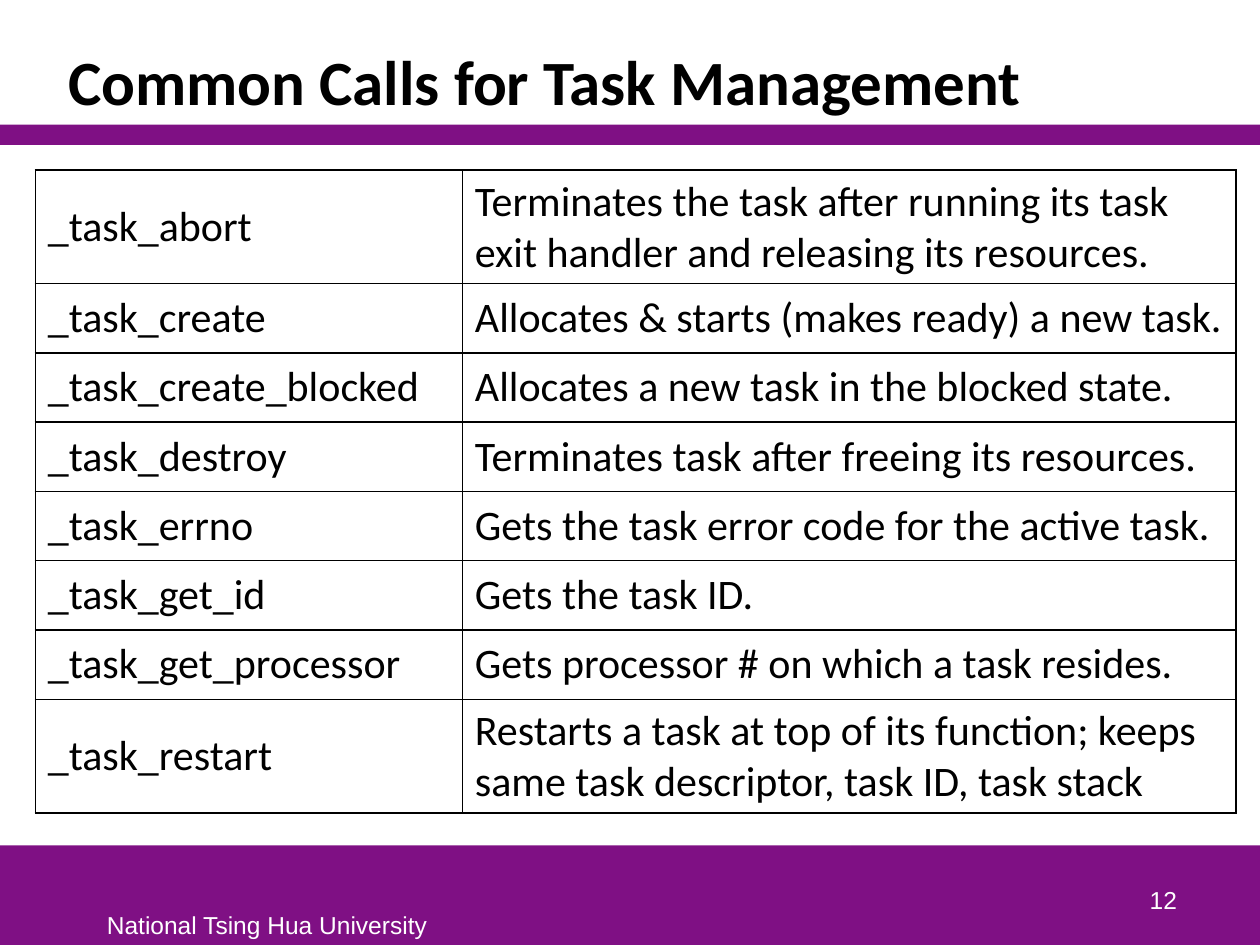
"""Build the slide that lists the common task management calls."""
import pptx
import pptx.dml.color
import pptx.enum.shapes
import pptx.enum.text
import pptx.oxml
import pptx.oxml.ns
import pptx.util

Inches = pptx.util.Inches
Align = pptx.enum.text.PP_ALIGN
Anchor = pptx.enum.text.MSO_ANCHOR
Fit = pptx.enum.text.MSO_AUTO_SIZE

CALLS = [
    ("_task_abort", "Terminates the task after running its task exit handler "
     "and releasing its resources.", False),
    ("_task_create", "Allocates & starts (makes ready) a new task.", True),
    ("_task_create_blocked", "Allocates a new task in the blocked state.", True),
    ("_task_destroy", "Terminates task after freeing its resources.", True),
    ("_task_errno", "Gets the task error code for the active task.", True),
    ("_task_get_id", "Gets the task ID.", True),
    ("_task_get_processor", "Gets processor # on which a task resides.", False),
    ("_task_restart", "Restarts a task at top of its function; keeps same "
     "task descriptor, task ID, task stack", False),
]


def color(code):
    """Turn a hex string into a colour."""
    return pptx.dml.color.RGBColor.from_string(code)


def write(frame, text, size=24, font="Calibri", ink="000000", bold=False,
          align=Align.LEFT, space=None, hang=0):
    """Put formatted text into the first paragraph of a frame."""
    para = frame.paragraphs[0]
    para.alignment = align
    para.line_spacing = space
    if hang:
        props = para._p.get_or_add_pPr()
        props.set("marL", str(Inches(hang)))
        props.set("indent", str(-Inches(hang)))
    run = para.add_run()
    run.text = text
    run.font.name = font
    run.font.size = pptx.util.Pt(size)
    run.font.bold = bold
    run.font.color.rgb = color(ink)


class Deck:
    """Hold the style and the current slide."""

    band = "7F1084"
    line = "000000"
    small = {"size": 14, "font": "Arial", "ink": "FFFFFF"}

    def __init__(self):
        """Open a deck with one title-only slide."""
        self.file = pptx.Presentation()
        self.file.slide_width = Inches(10)
        self.file.slide_height = Inches(7.5)
        self.slide = self.file.slides.add_slide(self.file.slide_layouts[5])

    def bar(self, top, height):
        """Draw a band across the whole slide."""
        shape = self.slide.shapes.add_shape(
            pptx.enum.shapes.MSO_SHAPE.RECTANGLE,
            0, Inches(top), Inches(10), Inches(height))
        shape.shadow.inherit = False
        shape.fill.solid()
        shape.fill.fore_color.rgb = color(self.band)
        shape.line.fill.background()

    def title(self, text, left, top, width, height):
        """Place and fill the title."""
        shape = self.slide.shapes.title
        shape.left, shape.top = Inches(left), Inches(top)
        shape.width, shape.height = Inches(width), Inches(height)
        frame = shape.text_frame
        frame.auto_size = Fit.NONE
        frame.vertical_anchor = Anchor.BOTTOM
        write(frame, text, size=36, bold=True, space=0.85)

    def label(self, text, left, top, width, height, wrap=True, **style):
        """Add a small white text box."""
        frame = self.slide.shapes.add_textbox(
            Inches(left), Inches(top), Inches(width), Inches(height)).text_frame
        frame.word_wrap = wrap
        frame.vertical_anchor = Anchor.BOTTOM if wrap else Anchor.TOP
        write(frame, text, **self.small, **style)

    def edge(self, cell):
        """Rule all four sides of a cell."""
        props = cell._tc.get_or_add_tcPr()
        for spot, side in enumerate(("lnL", "lnR", "lnT", "lnB")):
            props.insert(spot, pptx.oxml.parse_xml(
                f'<a:{side} {pptx.oxml.ns.nsdecls("a")} w="12700"><a:solidFill>'
                f'<a:srgbClr val="{self.line}"/></a:solidFill></a:{side}>'))

    def cell(self, cell, text, hang):
        """Fill and format one table cell."""
        cell.fill.background()
        cell.vertical_anchor = Anchor.MIDDLE
        write(cell.text_frame, text, hang=hang)
        self.edge(cell)

    def table(self, calls, left, top, widths, height):
        """Add the table of calls and their meanings."""
        grid = self.slide.shapes.add_table(
            len(calls), len(widths), Inches(left), Inches(top),
            Inches(sum(widths)), Inches(height * len(calls))).table
        grid.first_row = grid.horz_banding = False
        for col, width in zip(grid.columns, widths):
            col.width = Inches(width)
        for row, (name, sense, hung) in zip(grid.rows, calls):
            row.height = Inches(height)
            self.cell(row.cells[0], name, 0.38)
            self.cell(row.cells[1], sense, 0.38 if hung else 0)


def main():
    """Build and save the slide."""
    deck = Deck()
    deck.bar(6.71, 0.79)
    deck.bar(0.99, 0.16)
    deck.label("National Tsing Hua University", 0.75, 7.17, 2.76, 0.33, wrap=False)
    deck.title("Common Calls for Task Management", 0.44, 0.25, 8.97, 0.74)
    deck.label("12", 7.36, 6.81, 2.08, 0.5, align=Align.RIGHT)
    deck.table(CALLS, 0.28, 1.35, (3.39, 6.14), 0.55)
    deck.file.save("out.pptx")


if __name__ == "__main__":
    main()
